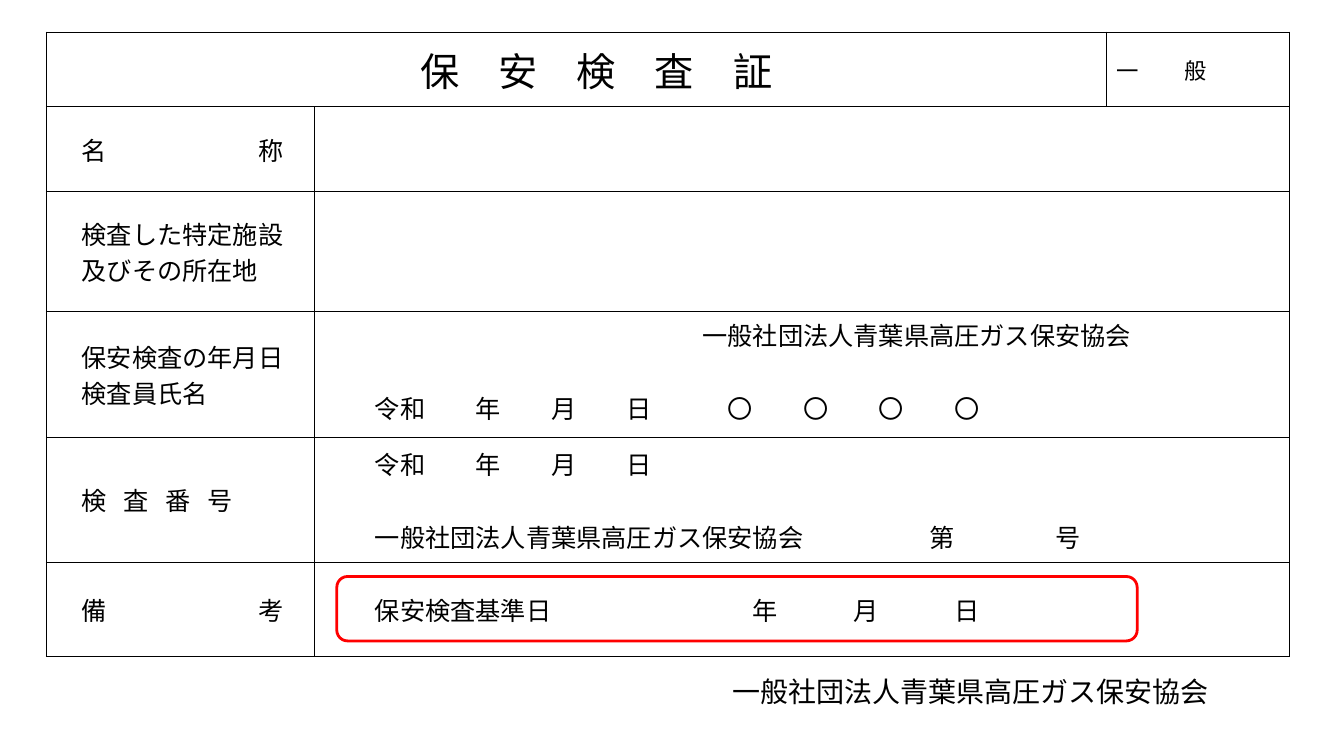
from lxml.etree import SubElement as Sub
from pptx import Presentation
from pptx.dml.color import RGBColor
from pptx.enum.shapes import MSO_SHAPE as Shape
from pptx.enum.text import MSO_ANCHOR as Anchor, PP_ALIGN as Align
from pptx.oxml.ns import qn
from pptx.util import Pt

BLACK = RGBColor(0, 0, 0)
RED = RGBColor(255, 0, 0)
FONT = "Noto Sans CJK JP"
EM = 18
PAD = 7.2
LINE = 26
COLS = [191.5, 566, 130.3]
ROWS = [53.3, 60.5, 85.7, 90, 89.3, 67]
ISSUER = "一般社団法人青葉県高圧ガス保安協会"
DATE = "令和\t年\t月\t日"
LABELS = [
    ("名\t称", [7]),
    ("検査した特定施設\n及びその所在地", []),
    ("保安検査の年月日\n検査員氏名", []),
    ("検\t査\t番\t号", [5 / 3, 10 / 3, 5]),
    ("備\t考", [7]),
]


def style(para, size=EM, stops=(), align=Align.LEFT, before=0):
    """Format a paragraph; tab stops are counted in widths of a character."""
    para.alignment = align
    para.space_before = Pt(before)
    if stops:
        tabs = Sub(para._p.get_or_add_pPr(), qn("a:tabLst"))
        for stop in stops:
            Sub(tabs, qn("a:tab"), pos=str(Pt(stop * size)), algn="l")
    font = para.font
    font.size = Pt(size)
    font.color.rgb = BLACK
    font.name = FONT
    Sub(font._element, qn("a:ea"), typeface=FONT)


def rule(cell):
    """Draw thin black borders around a cell and clear its fill."""
    props = cell._tc.get_or_add_tcPr()
    for side in ("lnL", "lnR", "lnT", "lnB"):
        edge = Sub(props, qn("a:" + side), w=str(Pt(1)))
        Sub(Sub(edge, qn("a:solidFill")), qn("a:srgbClr"), val=str(BLACK))
    cell.fill.background()


def write(cell, lines, lead=0, gap=0, size=EM, align=Align.LEFT):
    """Fill a cell with (text, stops) lines, set in by lead characters."""
    cell.margin_left = Pt(PAD + lead * size)
    cell.vertical_anchor = Anchor.MIDDLE
    frame = cell.text_frame
    frame.text = "\n".join(text for text, _ in lines)
    for num, (para, (_, stops)) in enumerate(zip(frame.paragraphs, lines)):
        style(para, size, stops, align, gap if num else 0)


def form(slide, left, top):
    frame = slide.shapes.add_table(len(ROWS), len(COLS), Pt(left), Pt(top),
                                   Pt(sum(COLS)), Pt(sum(ROWS)))
    table = frame.table
    table.first_row = table.horz_banding = False
    for col, width in zip(table.columns, COLS):
        col.width = Pt(width)
    for row, height in zip(table.rows, ROWS):
        row.height = Pt(height)
    for cell in table.iter_cells():
        rule(cell)

    table.cell(0, 0).merge(table.cell(0, 1))
    write(table.cell(0, 0), [("保　安　検　査　証", [])],
          lead=1, size=28, align=Align.CENTER)
    write(table.cell(0, 2), [("一\t般", [3])], size=16)

    details = [
        [("", [])],
        [("", [])],
        [("\t" + ISSUER, [13]),
         (DATE + "\t〇\t〇\t〇\t〇", [4, 7, 10, 14, 17, 20, 23])],
        [(DATE, [4, 7, 10]), (ISSUER + "\t第\t号", [22, 27])],
        [("保安検査基準日\t年\t月\t日", [15, 19, 23])],
    ]
    for row, ((label, stops), lines) in enumerate(zip(LABELS, details), 1):
        table.cell(row, 1).merge(table.cell(row, 2))
        write(table.cell(row, 0),
              [(text, stops) for text in label.split("\n")], lead=1)
        write(table.cell(row, 1), lines, lead=2, gap=LINE)
    table.cell(3, 1).vertical_anchor = Anchor.TOP


def sign(slide, left, top, width, height):
    box = slide.shapes.add_textbox(Pt(left), Pt(top), Pt(width), Pt(height))
    frame = box.text_frame
    frame.word_wrap = True
    frame.vertical_anchor = Anchor.MIDDLE
    frame.margin_left = Pt(PAD + 60)
    frame.text = ISSUER
    style(frame.paragraphs[0], size=20, align=Align.CENTER)


def mark(slide, left, top, width, height):
    """Outline the remarks entry in red."""
    ring = slide.shapes.add_shape(Shape.ROUNDED_RECTANGLE, Pt(left), Pt(top),
                                  Pt(width), Pt(height))
    ring.shadow.inherit = False
    ring.fill.background()
    ring.line.color.rgb = RED
    ring.line.width = Pt(2)


def main():
    deck = Presentation()
    deck.slide_width, deck.slide_height = Pt(960), Pt(540)
    slide = deck.slides.add_slide(deck.slide_layouts[6])
    left, top = 33.1, 23
    form(slide, left, top)
    sign(slide, left + 394.6, top + sum(ROWS), 471, 49.7)
    mark(slide, left + COLS[0] + 16, top + sum(ROWS[:-1]) + 10, 571.7, 46)
    deck.save("out.pptx")


if __name__ == "__main__":
    main()
